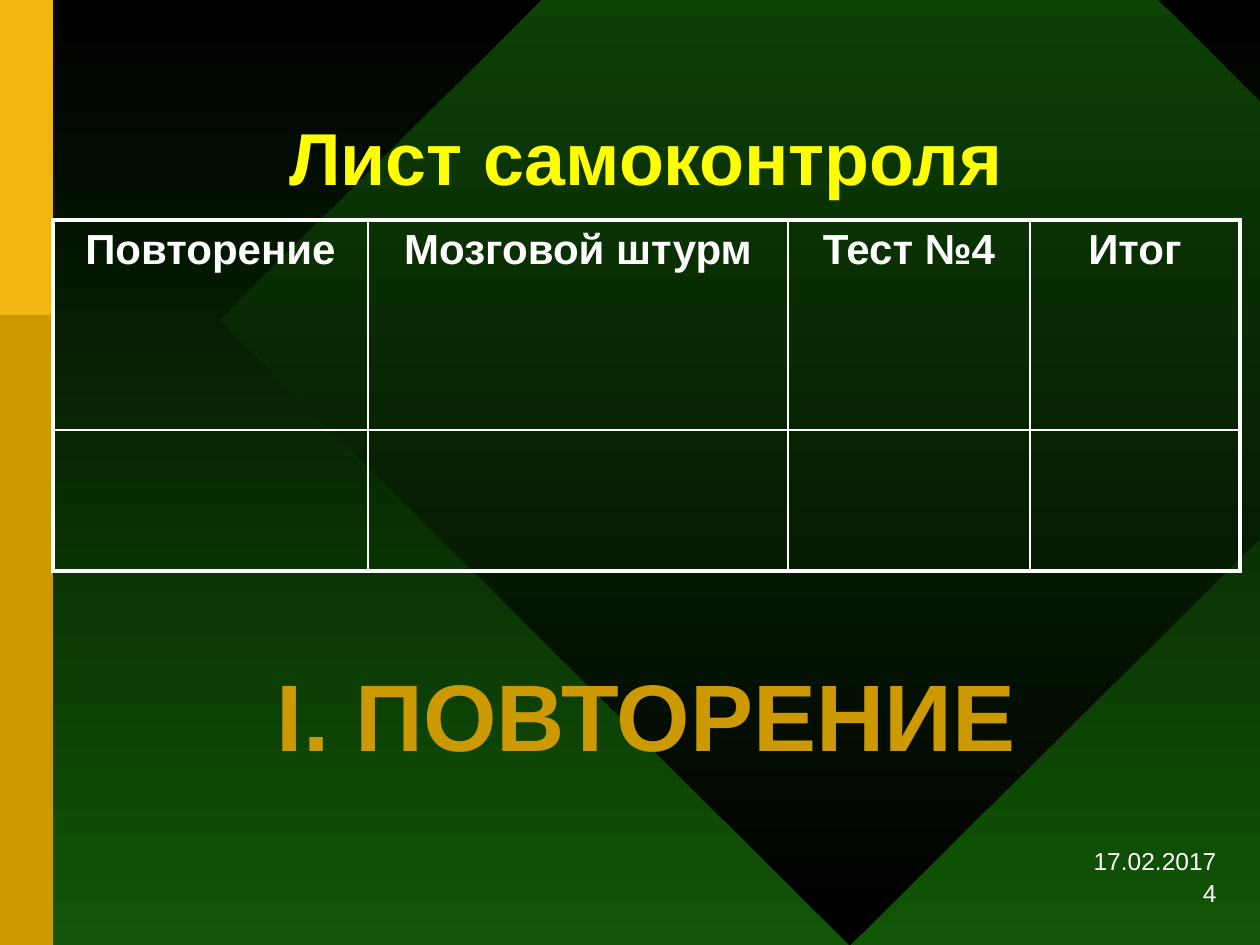
from dataclasses import dataclass

import pptx
import pptx.dml.color
import pptx.enum.shapes
import pptx.enum.text
import pptx.oxml
import pptx.oxml.ns
import pptx.util

PX_PER_INCH = 126
ALIGN = pptx.enum.text.PP_ALIGN
ANCHOR = pptx.enum.text.MSO_ANCHOR
SHAPE = pptx.enum.shapes.MSO_SHAPE


@dataclass(frozen=True)
class Theme:
    font: str = "Arial"
    black: str = "000000"
    green: str = "115606"
    gold: str = "CC9900"
    amber: str = "F1B60F"
    yellow: str = "FFFF00"
    white: str = "FFFFFF"
    heading_size: int = 54
    title_size: int = 42
    table_size: int = 24
    footer_size: int = 14
    outer_border: float = 2.25
    inner_border: float = 1


@dataclass(frozen=True)
class Area:
    left: int
    top: int
    width: int
    height: int

    def emu(self) -> tuple:
        return tuple(px(n) for n in (self.left, self.top, self.width, self.height))


@dataclass(frozen=True)
class Label:
    text: str
    area: Area
    size: int
    color: str
    bold: bool
    align: ALIGN
    anchor: ANCHOR


@dataclass(frozen=True)
class Panel:
    kind: SHAPE
    area: Area
    colors: tuple


THEME = Theme()

PANELS = [
    Panel(SHAPE.DIAMOND, Area(220, -305, 1260, 1250), (THEME.green, THEME.black)),
    Panel(SHAPE.RECTANGLE, Area(0, 0, 53, 945), (THEME.gold,)),
    Panel(SHAPE.RECTANGLE, Area(0, 0, 53, 315), (THEME.amber,)),
]

TITLE = Label("Лист самоконтроля", Area(126, 84, 1040, 158), THEME.title_size,
              THEME.yellow, True, ALIGN.CENTER, ANCHOR.MIDDLE)

LABELS = [
    Label("17.02.2017", Area(914, 840, 315, 42), THEME.footer_size,
          THEME.white, False, ALIGN.RIGHT, ANCHOR.BOTTOM),
    Label("4", Area(914, 882, 315, 32), THEME.footer_size,
          THEME.white, False, ALIGN.RIGHT, ANCHOR.BOTTOM),
    Label("I. ПОВТОРЕНИЕ", Area(179, 651, 935, 127), THEME.heading_size,
          THEME.gold, True, ALIGN.CENTER, ANCHOR.TOP),
]

TABLE_LEFT, TABLE_TOP = 53, 220
HEADERS = ["Повторение", "Мозговой штурм", "Тест №4", "Итог"]
COLUMN_WIDTHS = [315, 420, 242, 210]
ROW_HEIGHTS = [210, 141]


def px(length: int) -> pptx.util.Emu:
    return pptx.util.Inches(length / PX_PER_INCH)


def rgb(color: str) -> pptx.dml.color.RGBColor:
    return pptx.dml.color.RGBColor.from_string(color)


def paint(fill, colors: tuple) -> None:
    if len(colors) == 1:
        fill.solid()
        fill.fore_color.rgb = rgb(colors[0])
        return
    fill.gradient()
    fill.gradient_angle = 270
    for position, (stop, color) in enumerate(zip(fill.gradient_stops, colors)):
        stop.position = position
        stop.color.rgb = rgb(color)


def write(text_frame, text: str, size: int, color: str, bold: bool, align) -> None:
    text_frame.text = text
    paragraph = text_frame.paragraphs[0]
    paragraph.alignment = align
    for span in paragraph.runs:
        span.font.name = THEME.font
        span.font.size = pptx.util.Pt(size)
        span.font.bold = bold
        span.font.color.rgb = rgb(color)


def fill_label(box, label: Label) -> None:
    box.left, box.top, box.width, box.height = label.area.emu()
    box.text_frame.word_wrap = True
    box.text_frame.vertical_anchor = label.anchor
    write(box.text_frame, label.text, label.size, label.color, label.bold, label.align)


def add_panel(page, panel: Panel) -> None:
    shape = page.shapes.add_shape(panel.kind, *panel.area.emu())
    shape.shadow.inherit = False
    shape.line.fill.background()
    paint(shape.fill, panel.colors)


def set_borders(cell, outer_edges: dict) -> None:
    properties = cell._tc.get_or_add_tcPr()
    for index, (edge, outer) in enumerate(outer_edges.items()):
        points = THEME.outer_border if outer else THEME.inner_border
        properties.insert(index, pptx.oxml.parse_xml(
            f'<a:{edge} {pptx.oxml.ns.nsdecls("a")} w="{pptx.util.Pt(points)}">'
            f'<a:solidFill><a:srgbClr val="{THEME.white}"/></a:solidFill></a:{edge}>'))


def add_score_table(page) -> None:
    area = Area(TABLE_LEFT, TABLE_TOP, sum(COLUMN_WIDTHS), sum(ROW_HEIGHTS))
    last_row, last_column = len(ROW_HEIGHTS) - 1, len(COLUMN_WIDTHS) - 1
    table = page.shapes.add_table(last_row + 1, last_column + 1, *area.emu()).table
    table.first_row = table.horz_banding = False
    for column, width in zip(table.columns, COLUMN_WIDTHS):
        column.width = px(width)
    for r, height in enumerate(ROW_HEIGHTS):
        table.rows[r].height = px(height)
        for c, header in enumerate(HEADERS):
            cell = table.cell(r, c)
            cell.fill.background()
            set_borders(cell, {"lnL": c == 0, "lnR": c == last_column,
                               "lnT": r == 0, "lnB": r == last_row})
            if r == 0:
                write(cell.text_frame, header, THEME.table_size,
                      THEME.white, True, ALIGN.CENTER)


def main() -> None:
    deck = pptx.Presentation()
    deck.slide_width, deck.slide_height = px(1260), px(945)
    page = deck.slides.add_slide(deck.slide_layouts[5])
    paint(page.background.fill, (THEME.black, THEME.green))
    for panel in PANELS:
        add_panel(page, panel)
    title = page.shapes.title
    fill_label(title, TITLE)
    title.text_frame.paragraphs[0].line_spacing = 0.85
    page.shapes._spTree.append(title._element)
    add_score_table(page)
    for label in LABELS:
        fill_label(page.shapes.add_textbox(*label.area.emu()), label)
    deck.save("out.pptx")


if __name__ == "__main__":
    main()
